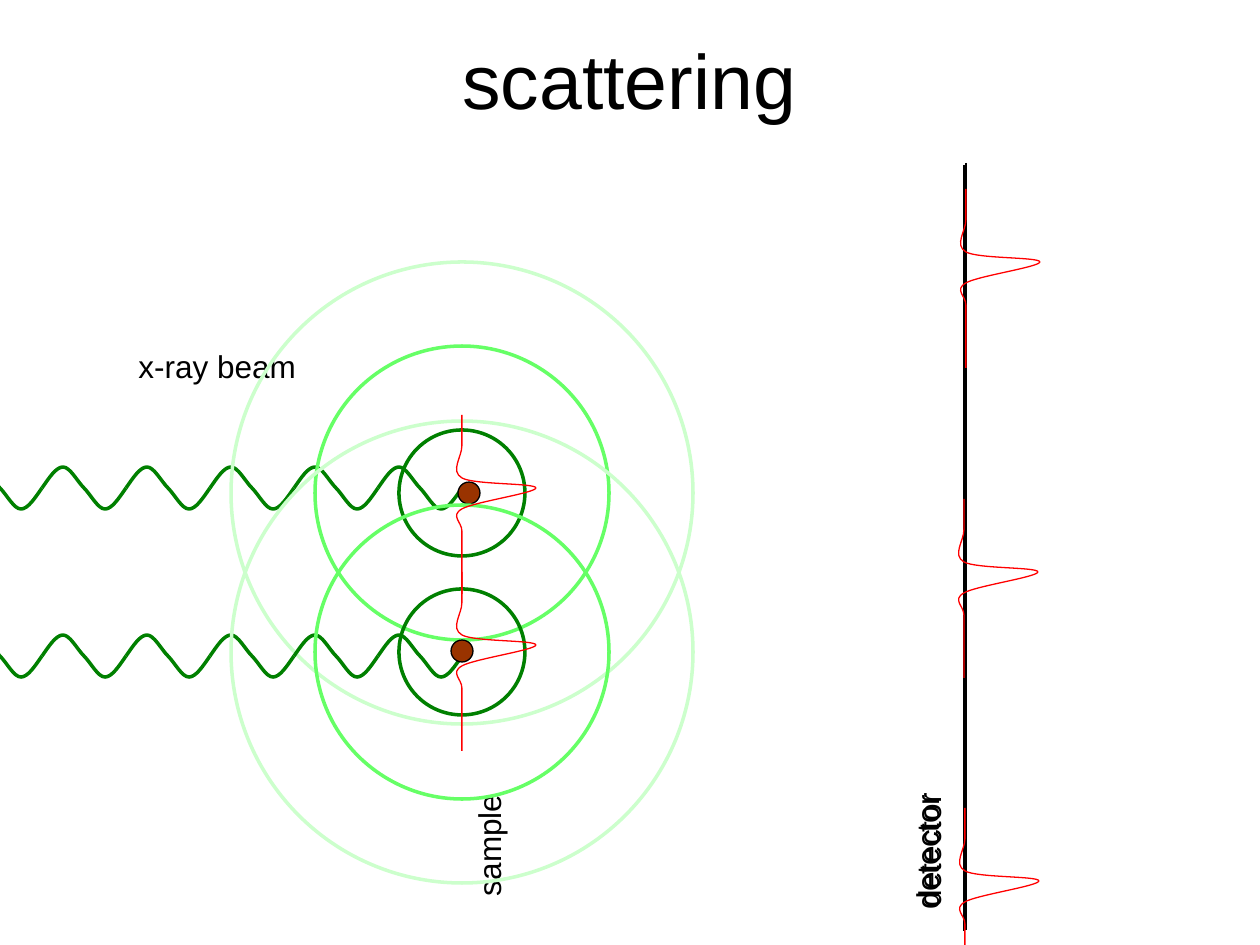
from dataclasses import dataclass
from itertools import product

from lxml import etree
from pptx import Presentation
from pptx import util as u
from pptx.dml import color
from pptx.enum import shapes, text
from pptx.oxml import ns

PX = u.Inches(1) / 126  # EMU in one px


@dataclass(frozen=True)
class Theme:
    font: str = "Arial"
    title: int = 44
    label: int = 18
    ink: str = "000000"
    beam: str = "008000"
    atom: str = "993300"
    pulse: str = "FF0000"
    rings: tuple = ("008000", "66FF66", "CCFFCC")
    hair: float = 0.75
    thin: float = 1
    thick: float = 2


@dataclass(frozen=True)
class Label:
    words: str
    x: int
    y: int
    w: int
    h: int = 50
    rotation: int = 0


@dataclass(frozen=True)
class Scatterer:
    beam_y: int
    atom: tuple[int, int]
    center: tuple[int, int]


T = Theme()

TITLE = Label("scattering", 94, 0, 1071, 158)
LABELS = [
    Label("detector", 857, 827, 139, rotation=270),
    Label("sample", 425, 820, 127, rotation=270),
    Label("detector", 859, 825, 139, rotation=270),
    Label("x-ray beam", 126, 341, 183),
]
DETECTOR = [(964, 165, 931), (966, 163, 930)]  # x, top, bottom
SCATTERERS = [
    Scatterer(488, (469, 493), (462, 493)),
    Scatterer(656, (462, 651), (462, 652)),
]
RADII = (63, 147, 231)
ATOM_RADIUS = 11
PULSES = [(964, 499), (966, 189), (965, 808), (462, 415), (462, 572)]

# Bezier points: a start, then two controls and an end for each curve
WAVE_START, WAVE_LENGTH, WAVE_COUNT = -42, 84, 6
WAVE = [(0, 0), (7, -10), (14, -21), (21, -21), (28, -21), (35, -7), (42, 0),
        (49, 7), (56, 21), (63, 21), (70, 21), (77, 10), (84, 0)]
PULSE = [(0, 0), (0, 5), (0, 21), (0, 31), (0, 42), (-12, 56), (0, 63),
         (12, 70), (74, 68), (74, 73), (74, 78), (12, 87), (0, 94),
         (-12, 101), (0, 107), (0, 116), (0, 124), (0, 136), (0, 147),
         (0, 158), (0, 173), (0, 179)]


def px(n: float) -> int:
    return round(n * PX)


def rgb(value: str) -> color.RGBColor:
    return color.RGBColor.from_string(value)


def apply(target, values: dict) -> None:
    for name, value in values.items():
        setattr(target, name, value)


def stroke(sp, hue: str, width: float) -> None:
    sp.line.color.rgb = rgb(hue)
    sp.line.width = u.Pt(width)


def add_label(s, label: Label, size: int, frame: dict, align=None) -> None:
    sp = s.shapes.add_textbox(*map(px, (label.x, label.y, label.w, label.h)))
    sp.rotation = label.rotation
    tf = sp.text_frame
    apply(tf, frame)
    p = tf.paragraphs[0]
    p.alignment = align
    r = p.add_run()
    r.text = label.words
    apply(r.font, {"name": T.font, "size": u.Pt(size)})
    r.font.color.rgb = rgb(T.ink)


def add_line(s, x: int, top: int, bottom: int) -> None:
    sp = s.shapes.add_connector(
        shapes.MSO_CONNECTOR.STRAIGHT, px(x), px(top), px(x), px(bottom))
    stroke(sp, T.ink, T.thin)
    etree.SubElement(sp._element.spPr, ns.qn("a:effectLst"))


def add_circle(s, center: tuple[int, int], radius: int, hue: str,
               width: float, fill: str | None = None) -> None:
    x, y = center
    sp = s.shapes.add_shape(
        shapes.MSO_SHAPE.OVAL, px(x - radius), px(y - radius),
        px(2 * radius), px(2 * radius))
    sp.shadow.inherit = False
    if fill:
        sp.fill.solid()
        sp.fill.fore_color.rgb = rgb(fill)
    else:
        sp.fill.background()
    stroke(sp, hue, width)


def add_curve(parent, points: list, x: int, y: int, hue: str,
              width: float) -> None:
    start, *rest = [(x + dx, y + dy) for dx, dy in points]
    builder = parent.shapes.build_freeform(*start, scale=PX)
    builder.add_line_segments(rest, close=False)
    sp = builder.convert_to_shape()
    sp.shadow.inherit = False
    sp.fill.background()
    stroke(sp, hue, width)
    # Turn each three straight segments into one cubic curve
    segments = list(sp._element.iter(ns.qn("a:lnTo")))
    outline = segments[0].getparent()
    for i in range(0, len(segments), 3):
        bez = etree.SubElement(outline, ns.qn("a:cubicBezTo"))
        for seg in segments[i:i + 3]:
            bez.append(seg[0])
            outline.remove(seg)


def add_beam(s, y: int) -> None:
    group = s.shapes.add_group_shape()
    for i in range(WAVE_COUNT):
        add_curve(group, WAVE, WAVE_START + i * WAVE_LENGTH, y, T.beam, T.thick)


def main() -> None:
    prs = Presentation()
    apply(prs, {"slide_width": u.Inches(10), "slide_height": u.Inches(7.5)})
    s = prs.slides.add_slide(prs.slide_layouts[6])

    # Title and labels
    add_label(s, TITLE, T.title,
              {"word_wrap": True, "vertical_anchor": text.MSO_ANCHOR.MIDDLE},
              text.PP_ALIGN.CENTER)
    for label in LABELS:
        add_label(s, label, T.label,
                  {"word_wrap": False,
                   "auto_size": text.MSO_AUTO_SIZE.SHAPE_TO_FIT_TEXT})

    # Detector
    for line in DETECTOR:
        add_line(s, *line)

    # Beams, atoms and scattered waves
    for sc in SCATTERERS:
        add_beam(s, sc.beam_y)
        add_circle(s, sc.atom, ATOM_RADIUS, T.ink, T.hair, T.atom)
        for radius, hue in zip(RADII, T.rings):
            add_circle(s, sc.center, radius, hue, T.thick)

    # Intensity pulses
    for x, y in PULSES:
        add_curve(s, PULSE, x, y, T.pulse, T.hair)

    prs.save("out.pptx")


if __name__ == "__main__":
    main()
